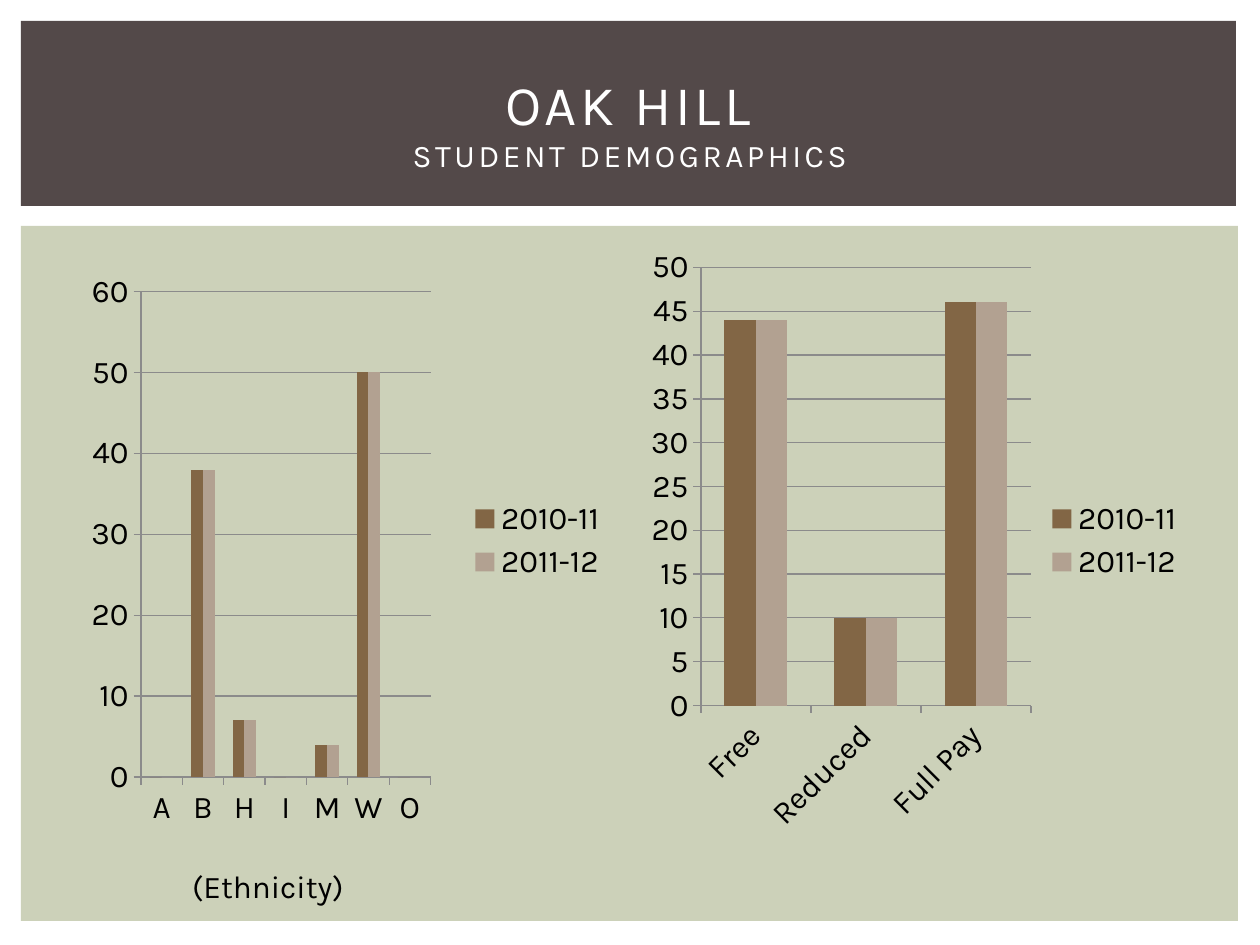
from pptx import Presentation
from pptx.chart.data import CategoryChartData
from pptx.dml.color import RGBColor
from pptx.enum.chart import XL_CHART_TYPE, XL_LEGEND_POSITION, XL_TICK_MARK
from pptx.enum.shapes import MSO_SHAPE
from pptx.enum.text import MSO_ANCHOR, PP_ALIGN
from pptx.oxml import parse_xml
from pptx.oxml.ns import nsdecls
from pptx.util import Pt

PX = 914400 / 126
FONT = "Karla"
WHITE = RGBColor(0xFF, 0xFF, 0xFF)
BLACK = RGBColor(0, 0, 0)
SAGE = RGBColor(0xCC, 0xD1, 0xB9)
DARK = RGBColor(0x53, 0x49, 0x49)
GRAY = RGBColor(0x8B, 0x8B, 0x8B)
BROWN = RGBColor(0x82, 0x66, 0x45)
TAUPE = RGBColor(0xB2, 0xA1, 0x91)
RECT = MSO_SHAPE.RECTANGLE
COLUMN = XL_CHART_TYPE.COLUMN_CLUSTERED
RIGHT = XL_LEGEND_POSITION.RIGHT
OUT = XL_TICK_MARK.OUTSIDE
MIDDLE = MSO_ANCHOR.MIDDLE
CENTER = PP_ALIGN.CENTER
YEARS = ("2010-11", "2011-12")


def emu(*sizes):
    return [round(size * PX) for size in sizes]


def style(font, size, color):
    font.name = FONT
    font.size = Pt(size)
    font.color.rgb = color


def add_panel(slide, box, color):
    panel = slide.shapes.add_shape(RECT, *emu(*box))
    panel.shadow.inherit = False
    panel.fill.solid()
    panel.fill.fore_color.rgb = color
    panel.line.fill.background()


def add_header(slide, box):
    left, top, width, height = box
    add_panel(slide, box, DARK)
    title = slide.shapes.title
    title.left, title.top, title.width, title.height = emu(
        left + 31, top + 28, width - 59, height - 40)
    # The title belongs in front of its band
    title.element.getparent().append(title.element)
    frame = title.text_frame
    frame.text = "OAK HILL\vSTUDENT DEMOGRAPHICS"
    frame.vertical_anchor = MIDDLE
    para = frame.paragraphs[0]
    para.alignment = CENTER
    for run, size in zip(para.runs, (32, 18)):
        style(run.font, size, WHITE)
        run._r.get_or_add_rPr().set("spc", "200")


def set_plot(chart, area):
    """Fix the inner plot area as fractions of the chart's box."""
    plot = chart._chartSpace.chart.plotArea
    for old in plot.findall("{*}layout"):
        plot.remove(old)
    parts = "".join(f'<c:{tag} val="{val}"/>' for tag, val in zip("xywh", area))
    plot.insert(0, parse_xml(
        f'<c:layout {nsdecls("c")}><c:manualLayout>'
        '<c:layoutTarget val="inner"/><c:xMode val="edge"/>'
        f'<c:yMode val="edge"/>{parts}</c:manualLayout></c:layout>'))


def add_columns(slide, box, cats, rows, top, step, area=None):
    data = CategoryChartData()
    data.categories = cats
    for year, row in zip(YEARS, rows):
        data.add_series(year, row)
    chart = slide.shapes.add_chart(COLUMN, *emu(*box), data).chart
    style(chart.font, 18, BLACK)
    chart.has_title = False
    chart.has_legend = True
    chart.legend.position = RIGHT
    chart.legend.include_in_layout = False

    plot = chart.plots[0]
    plot.gap_width = 150
    plot.overlap = 0
    plot.vary_by_categories = False
    for series, color in zip(plot.series, (BROWN, TAUPE)):
        series.format.fill.solid()
        series.format.fill.fore_color.rgb = color

    scale = chart.value_axis
    scale.minimum_scale, scale.maximum_scale = 0, top
    scale.major_unit = step
    scale.has_major_gridlines = True
    scale.major_gridlines.format.line.color.rgb = GRAY
    for axis in (scale, chart.category_axis):
        axis.major_tick_mark = OUT
        axis.format.line.color.rgb = GRAY
    if area:
        set_plot(chart, area)


def add_label(slide, box, text):
    frame = slide.shapes.add_textbox(*emu(*box)).text_frame
    frame.word_wrap = True
    frame.text = text
    para = frame.paragraphs[0]
    para.alignment = CENTER
    style(para.runs[0].font, 18, BLACK)


def add_body(slide, box):
    left, top, width, height = box
    add_panel(slide, box, SAGE)
    ethnic = (0, 38, 7, 0, 4, 50, 0)
    lunch = (44, 10, 46)
    wide, tall = 557, 607
    add_columns(slide, (left + 42, top + 11, wide, tall), "ABHIMWO",
                (ethnic, ethnic), 60, 10, (0.14, 0.09, 0.52, 0.8))
    add_columns(slide, (left + 619, top + 11, wide, tall),
                ("Free", "Reduced", "Full Pay"), (lunch, lunch), 50, 5)
    add_label(slide, (left + 63, top + 635, 368, 50), "(Ethnicity)")


def main():
    deck = Presentation()
    deck.slide_width, deck.slide_height = emu(1260, 945)
    slide = deck.slides.add_slide(deck.slide_layouts[5])
    add_body(slide, (21, 226, 1217, 695))
    add_header(slide, (21, 21, 1215, 185))
    deck.save("out.pptx")


if __name__ == "__main__":
    main()
